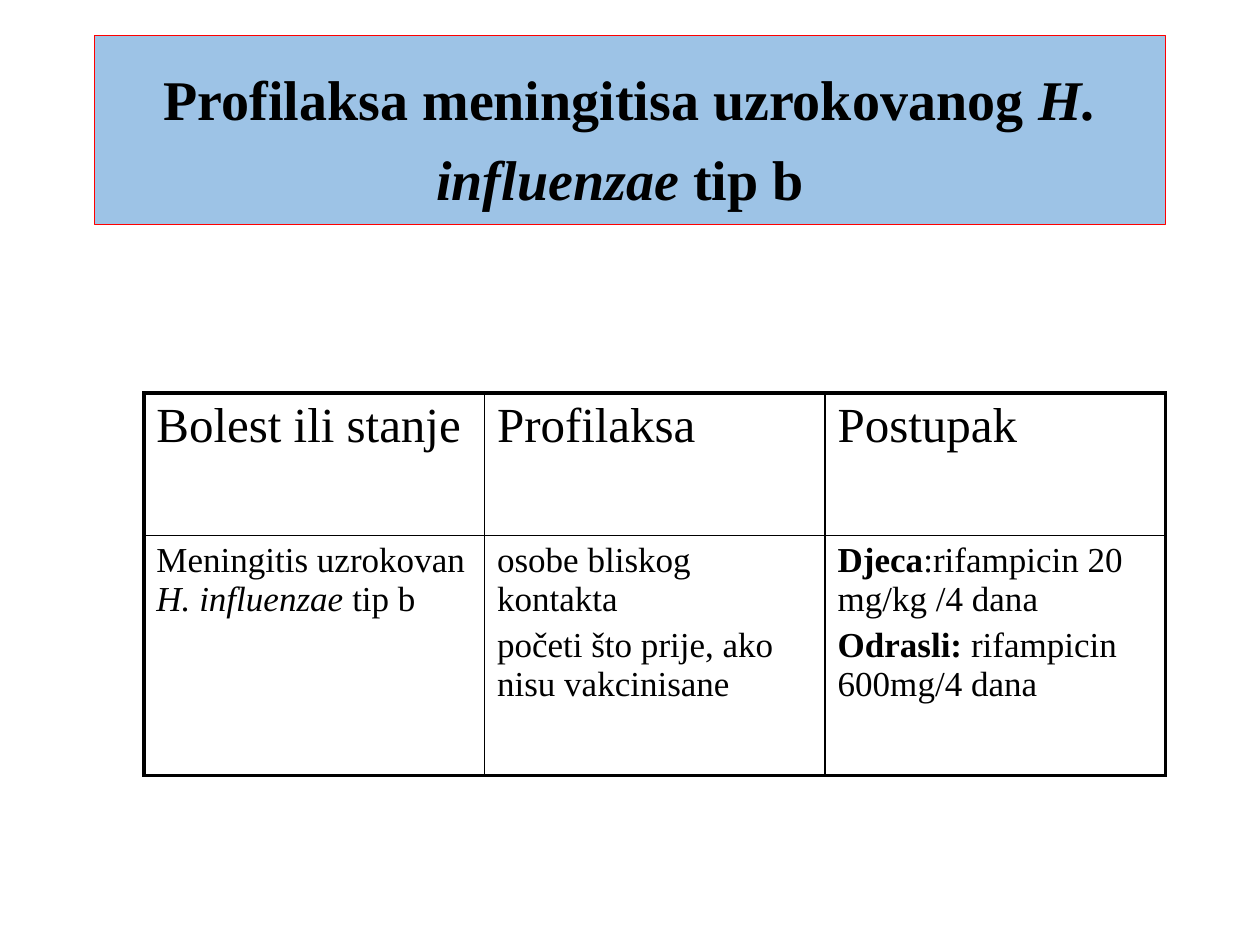
import pptx
import pptx.dml.color
import pptx.enum.text
import pptx.oxml
import pptx.oxml.ns
import pptx.util
from pptx.util import Cm, Pt

BLACK = pptx.dml.color.RGBColor(0x00, 0x00, 0x00)
RED = pptx.dml.color.RGBColor(0xFF, 0x00, 0x00)
LIGHT_BLUE = pptx.dml.color.RGBColor(0x9D, 0xC3, 0xE6)
FONT = "Times New Roman"
THICK, THIN = Pt(2.25), Pt(1)

# Each cell is a list of paragraphs, each paragraph a list of (text, style) runs
HEADINGS = [[[(text, "")]] for text in ("Bolest ili stanje", "Profilaksa", "Postupak")]
DISEASE = [
    [[("Meningitis uzrokovan ", ""), ("H. influenzae ", "italic"), ("tip b", "")]],
    [[("osobe bliskog kontakta", "")], [("početi što prije, ako nisu vakcinisane", "")]],
    [[("Djeca", "bold"), (":rifampicin 20 mg/kg /4 dana", "")],
     [("Odrasli:", "bold"), (" rifampicin 600mg/4 dana", "")]],
]


def write_paragraph(paragraph, runs, size):
    paragraph.font.name = FONT
    paragraph.font.size = Pt(size)
    paragraph.font.color.rgb = BLACK
    for text, style in runs:
        run = paragraph.add_run()
        run.text = text
        if style:
            setattr(run.font, style, True)


def add_heading(slide, left, top, width, height):
    title = slide.shapes.title
    title.left, title.top, title.width, title.height = left, top, width, height
    title.fill.solid()
    title.fill.fore_color.rgb = LIGHT_BLUE
    title.line.color.rgb = RED
    title.line.width = Pt(0.75)

    frame = title.text_frame
    frame.word_wrap = True
    frame.auto_size = pptx.enum.text.MSO_AUTO_SIZE.NONE
    frame.vertical_anchor = pptx.enum.text.MSO_ANCHOR.BOTTOM
    paragraph = frame.paragraphs[0]
    paragraph.alignment = pptx.enum.text.PP_ALIGN.CENTER
    paragraph.line_spacing = 0.9
    runs = [("Profilaksa meningitisa uzrokovanog ", ""),
            ("H. influenzae ", "italic"), ("tip b", ""), (" ", "")]
    write_paragraph(paragraph, runs, 32)
    paragraph.font.bold = True
    # The larger closing space opens up the last line
    paragraph.runs[-1].font.size = Pt(45)


def set_borders(cell, widths):
    properties = cell._tc.get_or_add_tcPr()
    for side, width in widths.items():
        properties.append(pptx.oxml.parse_xml(
            f'<a:ln{side} {pptx.oxml.ns.nsdecls("a")} w="{width}">'
            f'<a:solidFill><a:srgbClr val="{BLACK}"/></a:solidFill></a:ln{side}>'))


def add_prophylaxis_table(slide, left, top, width, row_heights):
    rows = [(HEADINGS, 28), (DISEASE, 20)]
    last_row, last_column = len(rows) - 1, len(HEADINGS) - 1
    table = slide.shapes.add_table(len(rows), len(HEADINGS), left, top,
                                   width, sum(row_heights)).table
    table.first_row = table.horz_banding = False

    for r, (contents, size) in enumerate(rows):
        table.rows[r].height = row_heights[r]
        for c, paragraphs in enumerate(contents):
            cell = table.cell(r, c)
            # Thick outer frame, thin inner grid
            set_borders(cell, {"L": THICK if c == 0 else THIN,
                               "R": THICK if c == last_column else THIN,
                               "T": THICK if r == 0 else THIN,
                               "B": THICK if r == last_row else THIN})
            cell.fill.background()
            frame = cell.text_frame
            for i, runs in enumerate(paragraphs):
                paragraph = frame.add_paragraph() if i else frame.paragraphs[0]
                if i:
                    paragraph.space_before = Pt(0.2 * size)
                write_paragraph(paragraph, runs, size)


def main():
    presentation = pptx.Presentation()
    presentation.slide_width, presentation.slide_height = Cm(25.4), Cm(19.05)
    slide = presentation.slides.add_slide(presentation.slide_layouts[0])

    # The subtitle is not used
    subtitle = slide.placeholders[1].element
    subtitle.getparent().remove(subtitle)

    add_heading(slide, Cm(1.9), Cm(0.71), Cm(21.6), Cm(3.81))
    add_prophylaxis_table(slide, Cm(2.9), Cm(7.92), Cm(20.6), [Cm(2.87), Cm(4.85)])
    presentation.save("out.pptx")


if __name__ == "__main__":
    main()
